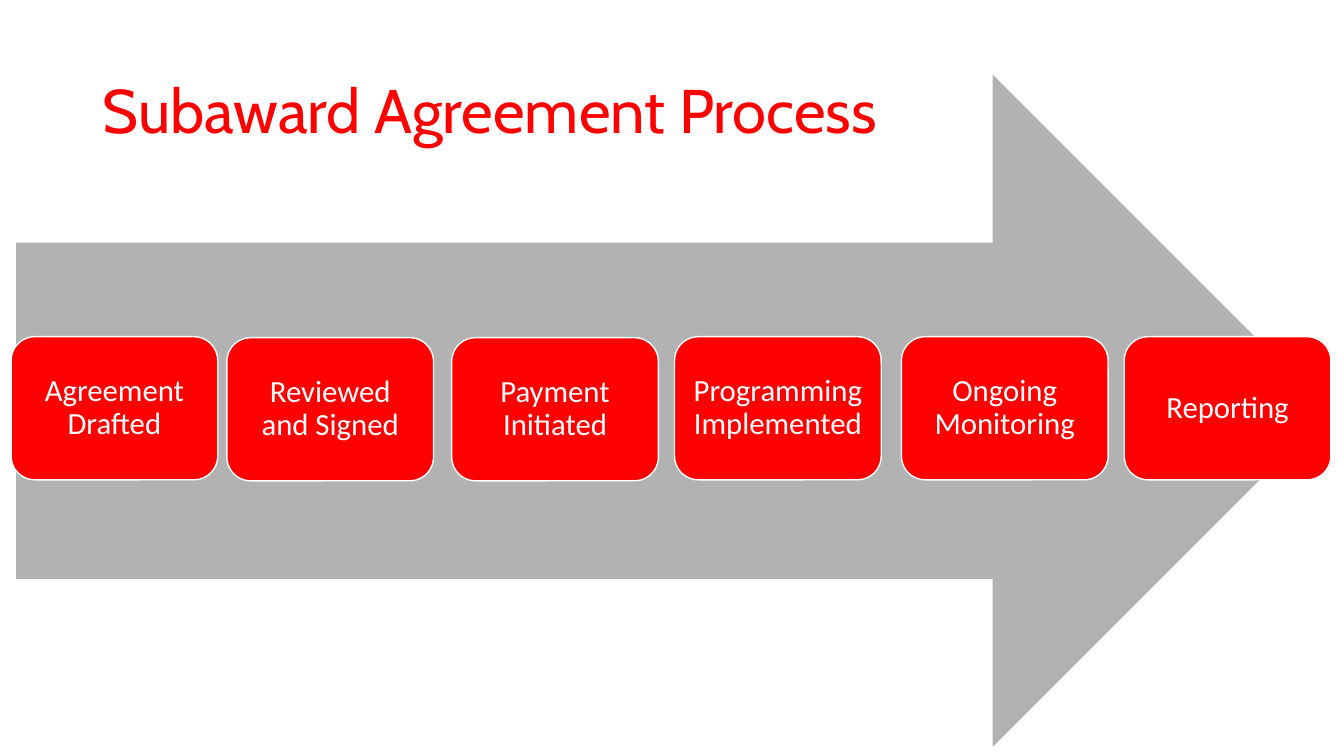
from dataclasses import dataclass

from pptx import Presentation
from pptx.dml.color import RGBColor
from pptx.enum.shapes import MSO_SHAPE
from pptx.enum.text import MSO_ANCHOR, PP_ALIGN
from pptx.shapes.autoshape import Shape
from pptx.slide import Slide
from pptx.text.text import TextFrame
from pptx.util import Inches, Pt

RED = RGBColor(0xFF, 0x00, 0x00)
GRAY = RGBColor(0xB2, 0xB2, 0xB2)
WHITE = RGBColor(0xFF, 0xFF, 0xFF)
ARROW = MSO_SHAPE.RIGHT_ARROW
ROUND = MSO_SHAPE.ROUNDED_RECTANGLE
MIDDLE = MSO_ANCHOR.MIDDLE
LEFT = PP_ALIGN.LEFT
CENTER = PP_ALIGN.CENTER

STEP_WIDTH = 2.05
STEP_HEIGHT = 1.42
INSET = Inches(0.09)


@dataclass
class Step:
    text: str
    left: float
    top: float = 3.34


STEPS = [
    Step("Agreement Drafted", 0.11),
    Step("Reviewed and Signed", 2.25, 3.35),
    Step("Payment Initiated", 4.48, 3.35),
    Step("Programming Implemented", 6.69),
    Step("Ongoing Monitoring", 8.94),
    Step("Reporting", 11.15),
]


def write(frame: TextFrame, text: str, font: str, size: int,
          color: RGBColor, align: PP_ALIGN) -> None:
    frame.text = text
    frame.word_wrap = True
    frame.vertical_anchor = MIDDLE
    line = frame.paragraphs[0]
    line.alignment = align
    line.line_spacing = 0.9
    line.font.name = font
    line.font.size = Pt(size)
    line.font.color.rgb = color


def add_block(slide: Slide, kind: MSO_SHAPE, left: float, top: float,
              width: float, height: float, color: RGBColor) -> Shape:
    block = slide.shapes.add_shape(
        kind, Inches(left), Inches(top), Inches(width), Inches(height))
    block.shadow.inherit = False
    block.fill.solid()
    block.fill.fore_color.rgb = color
    block.line.fill.background()
    return block


def add_step(slide: Slide, step: Step) -> None:
    block = add_block(slide, ROUND, step.left, step.top,
                      STEP_WIDTH, STEP_HEIGHT, RED)
    block.line.color.rgb = WHITE
    block.line.width = Pt(1)
    frame = block.text_frame
    frame.margin_left = frame.margin_right = INSET
    frame.margin_top = frame.margin_bottom = INSET
    write(frame, step.text, "Calibri", 22, WHITE, CENTER)


def add_title(slide: Slide, text: str) -> None:
    box = slide.shapes.add_textbox(
        Inches(0.92), Inches(0.4), Inches(11.5), Inches(1.45))
    write(box.text_frame, text, "Cabin", 44, RED, LEFT)


def main() -> None:
    deck = Presentation()
    deck.slide_width = Inches(13.33)
    deck.slide_height = Inches(7.5)
    slide = deck.slides.add_slide(deck.slide_layouts[6])
    add_title(slide, "Subaward Agreement Process")
    add_block(slide, ARROW, 0.16, 0.74, 13.02, 6.67, GRAY)
    for step in STEPS:
        add_step(slide, step)
    deck.save("out.pptx")


if __name__ == "__main__":
    main()
